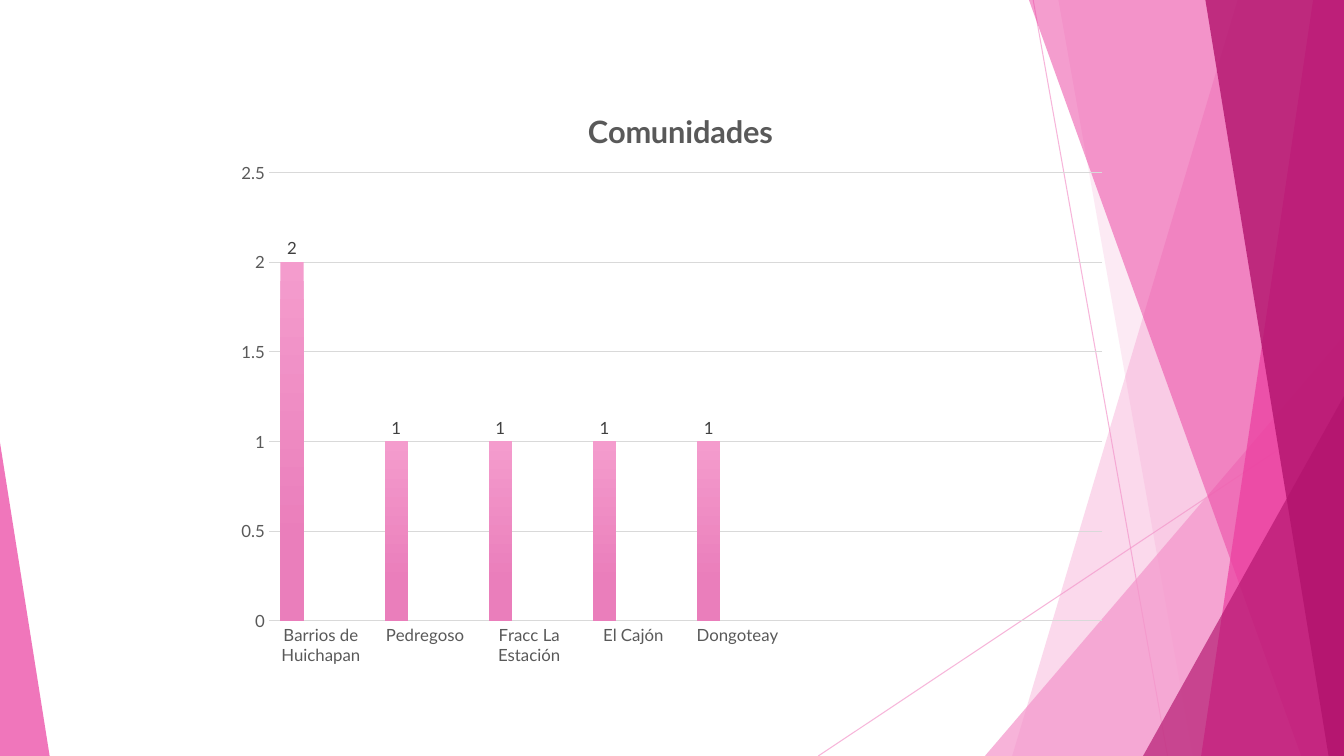
from lxml import etree
from pptx import Presentation
from pptx.chart.data import CategoryChartData
from pptx.dml.color import RGBColor
from pptx.enum.chart import XL_CHART_TYPE as ChartType, XL_LABEL_POSITION as LabelPosition
from pptx.enum.chart import XL_TICK_MARK as TickMark
from pptx.enum.shapes import MSO_CONNECTOR as Connector, MSO_SHAPE as Shape
from pptx.oxml import parse_xml
from pptx.oxml.ns import nsdecls, qn
from pptx.util import Pt

WIDTH, HEIGHT = 960, 540
LIGHT, PINK, DARK = "F496CB", "EB3D9F", "B2136D"


def color(hex_string):
    return RGBColor.from_string(hex_string)


def set_opacity(item, percent):
    """Make every plain colour in the shape or line partly transparent."""
    for node in item._element.iter(qn("a:srgbClr")):
        etree.SubElement(node, qn("a:alpha"), val=str(percent * 1000))


deck = Presentation()
deck.slide_width, deck.slide_height = Pt(WIDTH), Pt(HEIGHT)
page = deck.slides.add_slide(deck.slide_layouts[6])

# Thin lines behind the facets
for ends in [(738, 0, 834, HEIGHT), (WIDTH, 290, 584.5, HEIGHT)]:
    line = page.shapes.add_connector(Connector.STRAIGHT, *map(Pt, ends))
    line.line.color.rgb = color(LIGHT)
    line.line.width = Pt(0.75)
    etree.SubElement(line._element.spPr, qn("a:effectLst"))
    set_opacity(line, 70)

# Bands: slanted left edge given by its top and bottom x
# Triangles: left, top, width, height and the apex position
facets = [
    ("band", (884, 723), LIGHT, 36),
    ("band", (756, 852), LIGHT, 20),
    ("triangle", (703.5, 240, 256.5, 300, 1), LIGHT, 72),
    ("band", (735, 929.5), PINK, 50),
    ("band", (938, 858), PINK, 70),
    ("band", (861, 949), DARK, 80),
    ("triangle", (816.5, 283, 143.5, 257, 1), DARK, 66),
    ("triangle", (0, 316, 35.5, 224, 0), PINK, 70),
]
for kind, geometry, fill_color, opacity in facets:
    if kind == "band":
        top_x, bottom_x = geometry
        outline = page.shapes.build_freeform(Pt(top_x), Pt(0))
        corners = [(WIDTH, 0), (WIDTH, HEIGHT), (bottom_x, HEIGHT)]
        outline.add_line_segments([(Pt(x), Pt(y)) for x, y in corners], close=True)
        facet = outline.convert_to_shape()
    else:
        *frame, apex = geometry
        facet = page.shapes.add_shape(Shape.ISOSCELES_TRIANGLE, *map(Pt, frame))
        facet.adjustments[0] = apex
    facet.shadow.inherit = False
    facet.fill.solid()
    facet.fill.fore_color.rgb = color(fill_color)
    facet.line.fill.background()
    set_opacity(facet, opacity)

# Column chart: three of the eight categories have no name or value
data = CategoryChartData()
data.categories = ["Barrios de Huichapan", "Pedregoso", "Fracc La Estación",
                   "El Cajón", "Dongoteay", "", "", ""]
data.add_series("Series 1", [2, 1, 1, 1, 1, None, None, None])
data.add_series("Series 2", [None] * 8)
data.add_series("Series 3", [None] * 8)
chart = page.shapes.add_chart(ChartType.COLUMN_CLUSTERED, Pt(160), Pt(57),
                              Pt(640), Pt(427), data).chart
chart.has_legend = False
chart.font.name, chart.font.size = "Lato", Pt(10)

title = chart.chart_title
title.text_frame.text = "Comunidades"
title.include_in_layout = False
title_font = title.text_frame.paragraphs[0].runs[0].font
title_format = {"name": "Lato", "size": Pt(22), "bold": True}
for name, value in title_format.items():
    setattr(title_font, name, value)
title_font.color.rgb = color("595959")

category_axis, value_axis = chart.category_axis, chart.value_axis
for axis in (category_axis, value_axis):
    axis.major_tick_mark = axis.minor_tick_mark = TickMark.NONE
    labels_font = axis.tick_labels.font
    labels_font.name, labels_font.size = "Lato", Pt(12)
    labels_font.color.rgb = color("595959")
category_axis.format.line.color.rgb = color("D9D9D9")
category_axis.format.line.width = Pt(1)
value_axis.format.line.fill.background()
value_axis.major_gridlines.format.line.color.rgb = color("D9D9D9")
value_axis.major_gridlines.format.line.width = Pt(0.75)
scale = {"minimum_scale": 0, "maximum_scale": 2.5, "major_unit": 0.5}
for name, value in scale.items():
    setattr(value_axis, name, value)

plot = chart.plots[0]
plot.gap_width, plot.overlap, plot.vary_by_categories = 100, -24, False
gradients = [("F49CCD", "EA7EBB"), ("BF4E79", "AC3066"), ("E7634C", "DE4522")]
for series, gradient in zip(plot.series, gradients):
    fill = series.format.fill
    fill.gradient()
    fill.gradient_angle = 270
    for stop, position, hex_string in zip(fill.gradient_stops, (0, 0.78), gradient):
        stop.position = position
        stop.color.rgb = color(hex_string)
    labels = series.data_labels
    labels.show_value, labels.position = True, LabelPosition.OUTSIDE_END
    labels.font.name, labels.font.size = "Lato", Pt(12)
    labels.font.color.rgb = color("404040")

# Fixed places for the title and the plot, as fractions of the chart
chart_node = chart._chartSpace.chart
layouts = [
    (chart_node.find(qn("c:title")), "", {"x": 0.4, "y": 0.04}),
    (chart_node.plotArea, '<c:layoutTarget val="inner"/>',
     {"x": 0.05, "y": 0.155, "w": 0.93, "h": 0.75}),
]
for parent, target, fractions in layouts:
    for old in parent.findall(qn("c:layout")):
        parent.remove(old)
    modes = "".join(f'<c:{key}Mode val="edge"/>' for key in "xy")
    sizes = "".join(f'<c:{key} val="{value}"/>' for key, value in fractions.items())
    layout = parse_xml(f'<c:layout {nsdecls("c")}><c:manualLayout>{target}{modes}{sizes}'
                       "</c:manualLayout></c:layout>")
    text = parent.find(qn("c:tx"))
    parent.insert(0 if text is None else 1, layout)

deck.save("out.pptx")
